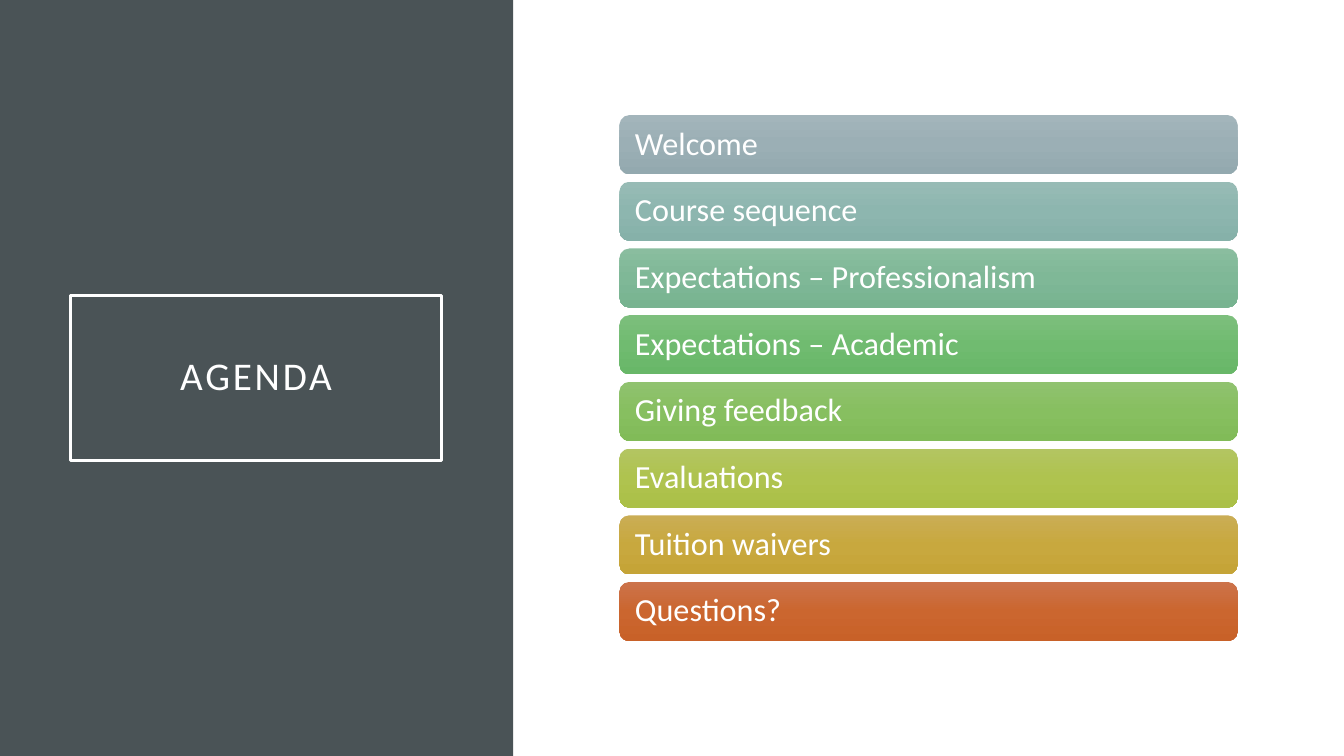
"""Build the agenda slide: a dark title panel beside eight coloured topic bars."""
from copy import deepcopy

from pptx import Presentation
from pptx.dml.color import RGBColor
from pptx.enum.shapes import MSO_SHAPE as Shape
from pptx.enum.text import MSO_ANCHOR as Anchor, MSO_AUTO_SIZE as AutoSize, PP_ALIGN as Align
from pptx.oxml.ns import qn
from pptx.util import Pt

TITLE = "AGENDA"
TOPICS = [
    ("Welcome", ("A3B5BB", "9BAFB5", "93A9AF")),
    ("Course sequence", ("97BBB5", "8DB6AF", "86B1A9")),
    ("Expectations – Professionalism", ("8ABD9F", "7FB897", "77B390")),
    ("Expectations – Academic", ("7DBF7D", "70BB70", "68B768")),
    ("Giving feedback", ("90C26F", "87BF60", "81BB58")),
    ("Evaluations", ("B3C562", "AFC34F", "ABC047")),
    ("Tuition waivers", ("CAAD55", "C8A83E", "C5A437")),
    ("Questions?", ("CC734B", "CB662F", "C86128")),
]
COLORS = {"panel": "4A5356", "white": "FFFFFF"}
FONT = "Calibri"
SLIDE_SIZE = (960, 540)
PANEL_BOX = (0, 0, 366.6, 540)
TITLE_BOX = (50.4, 211, 265, 118)
BAR_LEFT, BAR_TOP, BAR_WIDTH, BAR_HEIGHT = 442.5, 82.2, 441.5, 42.2
BAR_PITCH = 47.64
TITLE_FORMAT = {"size": 28, "align": Align.CENTER, "margins": (14.4, 14.4, 14.4, 14.4)}
BAR_FORMAT = {"size": 23, "align": Align.LEFT, "margins": (9, 0, 9, 0)}


def color(name):
    return RGBColor.from_string(COLORS.get(name, name))


def write(shape, text, style):
    frame = shape.text_frame
    frame.text = text
    margins = zip(("margin_left", "margin_top", "margin_right", "margin_bottom"),
                  map(Pt, style["margins"]))
    frame_format = {"word_wrap": True, "auto_size": AutoSize.NONE,
                    "vertical_anchor": Anchor.MIDDLE, **dict(margins)}
    for name, value in frame_format.items():
        setattr(frame, name, value)
    paragraph = frame.paragraphs[0]
    paragraph.alignment = style["align"]
    paragraph.line_spacing = 0.9
    font = paragraph.runs[0].font
    for name, value in {"name": FONT, "size": Pt(style["size"]), "bold": False}.items():
        setattr(font, name, value)
    font.color.rgb = color("white")
    return font


def add_block(slide, kind, box):
    shape = slide.shapes.add_shape(kind, *map(Pt, box))
    shape.shadow.inherit = False
    shape.line.fill.background()
    return shape


def fill_gradient(shape, stops):
    shape.fill.gradient()
    shape.fill.gradient_angle = 270
    stop_list = shape._element.spPr.find(qn("a:gradFill")).find(qn("a:gsLst"))
    stop_list.insert(1, deepcopy(stop_list[0]))
    for stop, position, shade in zip(shape.fill.gradient_stops, (0, 0.5, 1), stops):
        stop.position = position
        stop.color.rgb = color(shade)


def add_title(slide):
    title = slide.shapes.title
    for name, value in zip(("left", "top", "width", "height"), TITLE_BOX):
        setattr(title, name, Pt(value))
    title.line.color.rgb = color("white")
    title.line.width = Pt(2.5)
    font = write(title, TITLE, TITLE_FORMAT)
    font._element.set("spc", "200")


def main():
    presentation = Presentation()
    presentation.slide_width, presentation.slide_height = map(Pt, SLIDE_SIZE)
    slide = presentation.slides.add_slide(presentation.slide_layouts[5])

    panel = add_block(slide, Shape.RECTANGLE, PANEL_BOX)
    panel.fill.solid()
    panel.fill.fore_color.rgb = color("panel")
    slide.shapes.title._element.addprevious(panel._element)
    add_title(slide)

    for index, (topic, stops) in enumerate(TOPICS):
        top = BAR_TOP + index * BAR_PITCH
        bar = add_block(slide, Shape.ROUNDED_RECTANGLE, (BAR_LEFT, top, BAR_WIDTH, BAR_HEIGHT))
        fill_gradient(bar, stops)
        write(bar, topic, BAR_FORMAT)

    presentation.save("out.pptx")


if __name__ == "__main__":
    main()
